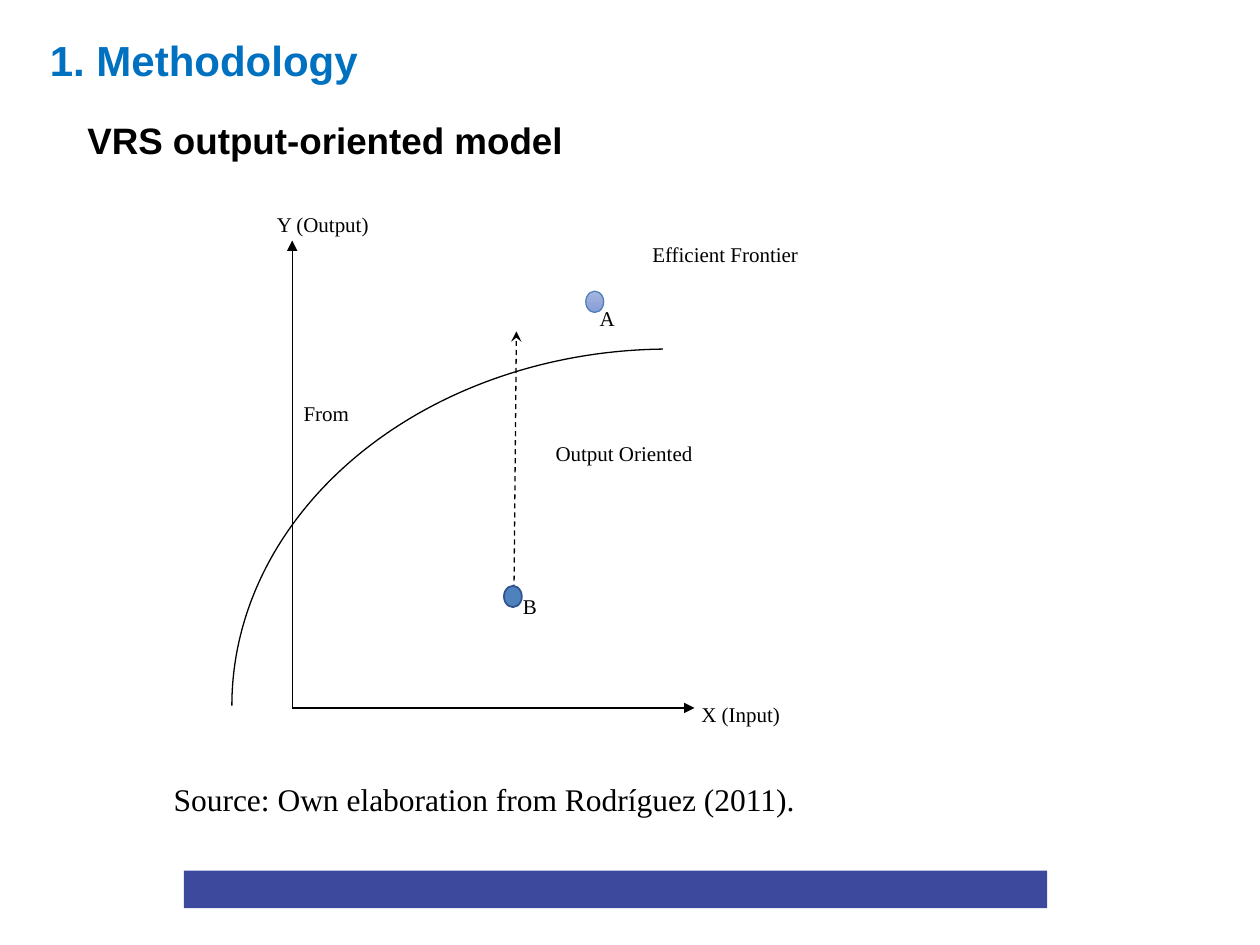
from lxml import etree
from pptx import Presentation
from pptx import util as u
from pptx.dml.color import RGBColor
from pptx.enum import dml, shapes, text
from pptx.oxml import ns

BLACK = RGBColor(0x00, 0x00, 0x00)
TITLE_BLUE = RGBColor(0x00, 0x70, 0xC0)
BAR_BLUE = RGBColor(0x3D, 0x49, 0x9D)
POINT_BLUE = RGBColor(0x4F, 0x81, 0xBD)
POINT_EDGE = RGBColor(0x31, 0x53, 0x8F)
GRADIENT_TOP = RGBColor(0xA6, 0xB6, 0xDE)
GRADIENT_BOTTOM = RGBColor(0x85, 0x9C, 0xD7)

# Axis geometry in centimetres
ORIGIN_X, ORIGIN_Y = 5.89, 14.27
AXIS_TOP, AXIS_RIGHT = 4.85, 14.0

# Diagram labels: wording, left, top, width, height
LABELS = [
    ("X (Input)", 13.89, 13.77, 2.82, 1.02),
    ("Y (Output)", 5.33, 3.89, 2.82, 1.02),
    ("Output Oriented", 10.95, 8.51, 4.75, 1.65),
    ("Efficient Frontier", 12.9, 4.5, 7.65, 1.42),
    ("B", 10.29, 11.58, 1.3, 1.6),
    ("A", 11.84, 5.79, 0.81, 0.94),
]


def place(shape, left, top, width, height):
    shape.left, shape.top = u.Cm(left), u.Cm(top)
    shape.width, shape.height = u.Cm(width), u.Cm(height)


def write(shape, wording, size, font="Times New Roman", color=BLACK, bold=False):
    frame = shape.text_frame
    frame.text = wording
    frame.word_wrap = True
    run_font = frame.paragraphs[0].runs[0].font
    run_font.name, run_font.size, run_font.bold = font, u.Pt(size), bold
    run_font.color.rgb = color
    return frame


def fill_placeholders(slide):
    title, body = slide.shapes.title, slide.placeholders[1]
    place(title, -2.62, 0.3, 13.46, 1.8)
    frame = write(title, "1. Methodology", 24, "Arial", TITLE_BLUE, True)
    frame.auto_size = text.MSO_AUTO_SIZE.NONE
    frame.vertical_anchor = text.MSO_ANCHOR.MIDDLE
    frame.paragraphs[0].alignment = text.PP_ALIGN.CENTER

    place(body, 1.35, 2.24, 12.7, 1.14)
    frame = write(body, "VRS output-oriented model", 21, "Arial", BLACK, True)
    frame.auto_size = text.MSO_AUTO_SIZE.NONE
    frame.margin_left = u.Cm(0.41)
    paragraph = frame.paragraphs[0]
    properties = paragraph._p.get_or_add_pPr()
    properties.set("marL", "0")
    properties.set("indent", "0")
    etree.SubElement(properties, ns.qn("a:buNone"))
    paragraph.space_before = u.Pt(0)


def add_label(container, wording, left, top, width, height):
    label = container.add_textbox(*map(u.Cm, (left, top, width, height)))
    frame = write(label, wording, 12)
    frame.paragraphs[0].line_spacing = 1.5
    frame.paragraphs[0].space_after = u.Pt(12)
    return frame


def add_arrow(container, start, end, head="triangle", dash=None):
    arrow = container.add_connector(
        shapes.MSO_CONNECTOR.STRAIGHT, *map(u.Cm, start + end))
    arrow.line.color.rgb = BLACK
    arrow.line.width = u.Pt(0.75)
    if dash:
        arrow.line.dash_style = dash
    etree.SubElement(arrow.line._get_or_add_ln(), ns.qn("a:tailEnd"), type=head)
    etree.SubElement(arrow._element.spPr, ns.qn("a:effectLst"))


def add_shape(container, kind, box, fill=None, edge=None, weight=0.75):
    shape = container.add_shape(kind, *map(u.Cm, box))
    shape.shadow.inherit = False
    if fill is None:
        shape.fill.background()
    else:
        shape.fill.solid()
        shape.fill.fore_color.rgb = fill
    if edge is None:
        shape.line.fill.background()
    else:
        shape.line.color.rgb = edge
        shape.line.width = u.Pt(weight)
    return shape


def add_diagram(slide):
    diagram = slide.shapes.add_group_shape().shapes

    # Label beside the vertical axis
    frame = add_label(diagram, "From", 5.33, 3.89, 15.95, 8.64)
    frame.vertical_anchor = text.MSO_ANCHOR.MIDDLE
    frame.margin_left = u.Cm(0.79)
    frame.margin_top = frame.margin_bottom = u.Cm(0.25)

    # Axes
    origin = (ORIGIN_X, ORIGIN_Y)
    add_arrow(diagram, origin, (ORIGIN_X, AXIS_TOP))
    add_arrow(diagram, origin, (AXIS_RIGHT, ORIGIN_Y))

    for label in LABELS:
        add_label(diagram, *label)

    # Output direction and point B
    add_arrow(diagram, (10.36, 12.07), (10.41, 6.68), "stealth",
              dml.MSO_LINE.DASH)
    ellipse = shapes.MSO_SHAPE.OVAL
    add_shape(diagram, ellipse, (10.16, 11.81, 0.36, 0.43),
              POINT_BLUE, POINT_EDGE, 1)

    # Efficient frontier: a quarter ellipse turned to rise from the left
    frontier = add_shape(diagram, shapes.MSO_SHAPE.ARC,
                         (6.3, 5.41, 14.38, 17.63), edge=BLACK)
    frontier.adjustments[0] = 162
    frontier.adjustments[1] = 215.4
    frontier.rotation = 270

    # Point A
    point = add_shape(diagram, ellipse, (11.81, 5.87, 0.36, 0.43),
                      POINT_BLUE, POINT_BLUE)
    point.fill.gradient()
    point.fill.gradient_angle = 270
    for stop, color in zip(point.fill.gradient_stops,
                           (GRADIENT_TOP, GRADIENT_BOTTOM)):
        stop.color.rgb = color


def main():
    presentation = Presentation()
    presentation.slide_width, presentation.slide_height = u.Cm(25.4), u.Cm(19.05)
    slide = presentation.slides.add_slide(presentation.slide_layouts[1])

    fill_placeholders(slide)

    # Source line
    source = slide.shapes.add_textbox(*map(u.Cm, (3.25, 15.6, 15.95, 1.02)))
    write(source, "Source: Own elaboration from Rodríguez (2011).", 18)

    add_diagram(slide)

    # Footer bar
    add_shape(slide.shapes, shapes.MSO_SHAPE.RECTANGLE,
              (3.71, 17.55, 17.4, 0.76), BAR_BLUE)
    presentation.save("out.pptx")


if __name__ == "__main__":
    main()
